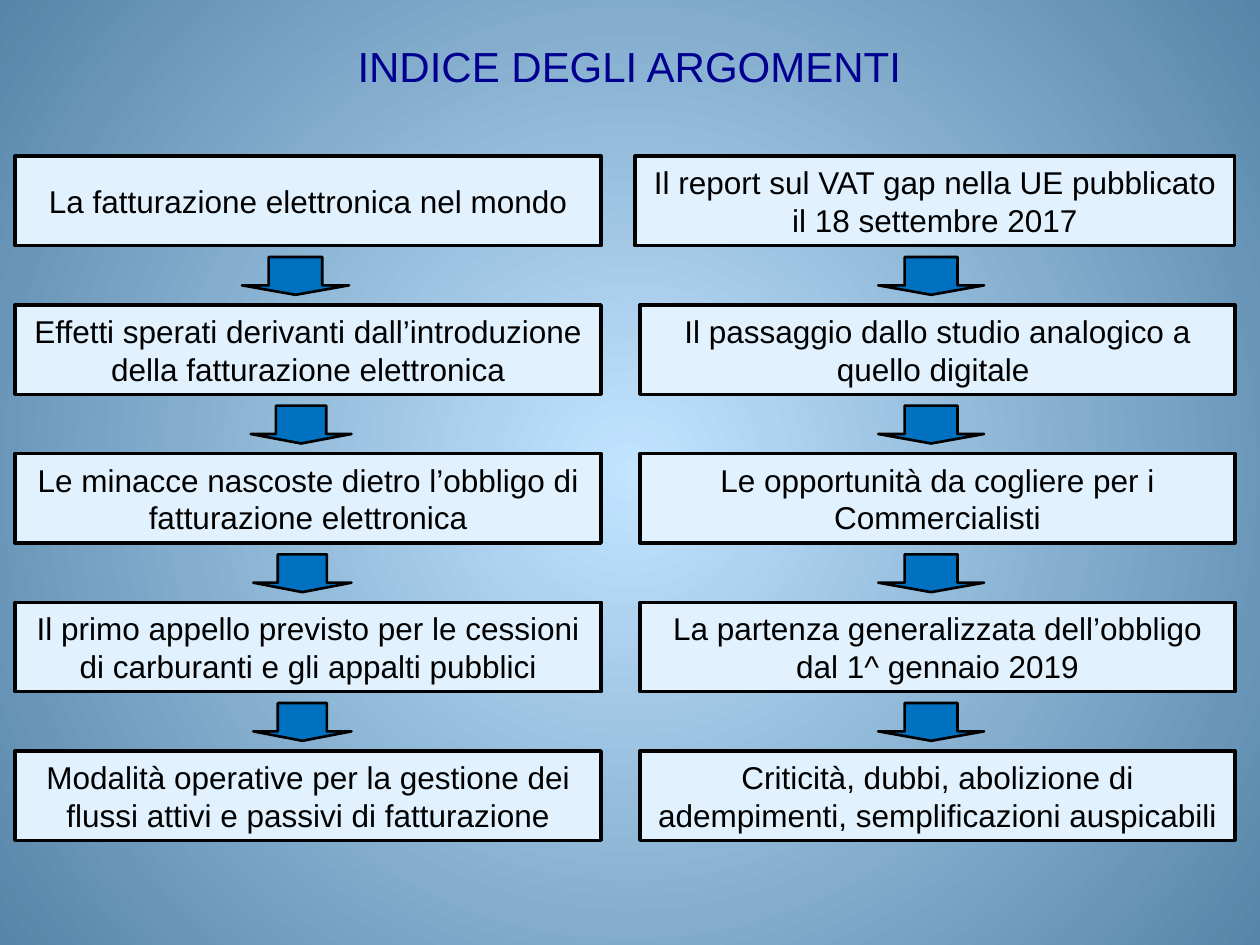
from dataclasses import dataclass

import lxml.etree
import pptx
import pptx.dml.color
import pptx.enum.shapes
import pptx.enum.text
import pptx.oxml.ns
import pptx.util

Inches = pptx.util.Inches
Pt = pptx.util.Pt
Shapes = pptx.enum.shapes.MSO_SHAPE

FIRST_BOX_TOP = 1.24
FIRST_ARROW_TOP = 2.04
ROW_STEP = 1.18
BOX_HEIGHT = 0.71
ARROW_HEIGHT = 0.3


@dataclass
class Span:
    left: float
    width: float


@dataclass
class Column:
    topics: list[str]
    boxes: list[Span]
    arrows: list[Span]


COLUMNS = [
    Column(
        topics=[
            "La fatturazione elettronica nel mondo",
            "Effetti sperati derivanti dall’introduzione della fatturazione elettronica",
            "Le minacce nascoste dietro l’obbligo di fatturazione elettronica",
            "Il primo appello previsto per le cessioni di carburanti e gli appalti pubblici",
            "Modalità operative per la gestione dei flussi attivi e passivi di fatturazione",
        ],
        boxes=[Span(0.12, 4.65)] * 5,
        arrows=[Span(1.92, 0.85), Span(1.99, 0.8)] + [Span(2.01, 0.78)] * 2,
    ),
    Column(
        topics=[
            "Il report sul VAT gap nella UE pubblicato il 18 settembre 2017",
            "Il passaggio dallo studio analogico a quello digitale ",
            "Le opportunità da cogliere per i Commercialisti",
            "La partenza generalizzata dell’obbligo dal 1^ gennaio 2019",
            "Criticità, dubbi, abolizione di adempimenti, semplificazioni auspicabili",
        ],
        boxes=[Span(5.04, 4.76)] + [Span(5.08, 4.72)] * 4,
        arrows=[Span(6.97, 0.84)] * 4,
    ),
]


def color(value: str) -> pptx.dml.color.RGBColor:
    return pptx.dml.color.RGBColor.from_string(value)


def write_text(shape, text: str, *, size: float, font_color: str,
               margin_x: float = 0.1, margin_y: float = 0.05) -> None:
    frame = shape.text_frame
    frame.word_wrap = True
    frame.auto_size = pptx.enum.text.MSO_AUTO_SIZE.NONE
    frame.vertical_anchor = pptx.enum.text.MSO_ANCHOR.MIDDLE
    frame.margin_left = frame.margin_right = Inches(margin_x)
    frame.margin_top = frame.margin_bottom = Inches(margin_y)
    paragraph = frame.paragraphs[0]
    paragraph.alignment = pptx.enum.text.PP_ALIGN.CENTER
    run = paragraph.add_run()
    run.text = text
    run.font.name = "Arial"
    run.font.size = Pt(size)
    run.font.color.rgb = color(font_color)


def add_block(slide, kind: Shapes, span: Span, top: float, height: float,
              *, fill: str, line_width: float):
    shape = slide.shapes.add_shape(
        kind, Inches(span.left), Inches(top), Inches(span.width), Inches(height))
    shape.shadow.inherit = False
    shape.fill.solid()
    shape.fill.fore_color.rgb = color(fill)
    shape.line.color.rgb = color("000000")
    shape.line.width = Pt(line_width)
    return shape


def set_radial_background(slide, center: str, edge: str) -> None:
    fill = slide.background.fill
    fill.gradient()
    for stop, value in zip(fill.gradient_stops, (center, edge)):
        stop.color.rgb = color(value)
    # Swap the linear direction for a circle around the middle
    qn = pptx.oxml.ns.qn
    gradient = slide.element.find(".//" + qn("a:gradFill"))
    gradient.remove(gradient.find(qn("a:lin")))
    circle = lxml.etree.SubElement(gradient, qn("a:path"), {"path": "circle"})
    lxml.etree.SubElement(
        circle, qn("a:fillToRect"), {side: "50000" for side in "ltrb"})


def draw_column(slide, column: Column) -> None:
    for row, (topic, span) in enumerate(zip(column.topics, column.boxes)):
        box = add_block(slide, Shapes.RECTANGLE, span,
                        FIRST_BOX_TOP + row * ROW_STEP, BOX_HEIGHT,
                        fill="E1F1FD", line_width=2)
        write_text(box, topic, size=18, font_color="000000")
    for row, span in enumerate(column.arrows):
        arrow = add_block(slide, Shapes.DOWN_ARROW, span,
                          FIRST_ARROW_TOP + row * ROW_STEP, ARROW_HEIGHT,
                          fill="0070C0", line_width=1.5)
        arrow.adjustments[0] = 0.5
        arrow.adjustments[1] = 0.25


def main() -> None:
    presentation = pptx.Presentation()
    presentation.slide_width = Inches(10)
    presentation.slide_height = Inches(7.5)
    slide = presentation.slides.add_slide(presentation.slide_layouts[5])
    set_radial_background(slide, "C2E4FF", "5685A9")

    # Title
    title = slide.shapes.title
    title.left, title.top = Inches(0.27), Inches(0.29)
    title.width, title.height = Inches(9.45), Inches(0.47)
    write_text(title, "INDICE DEGLI ARGOMENTI", size=24, font_color="000090",
               margin_x=0, margin_y=0)

    # Two chains of topics
    for column in COLUMNS:
        draw_column(slide, column)

    presentation.save("out.pptx")


if __name__ == "__main__":
    main()
